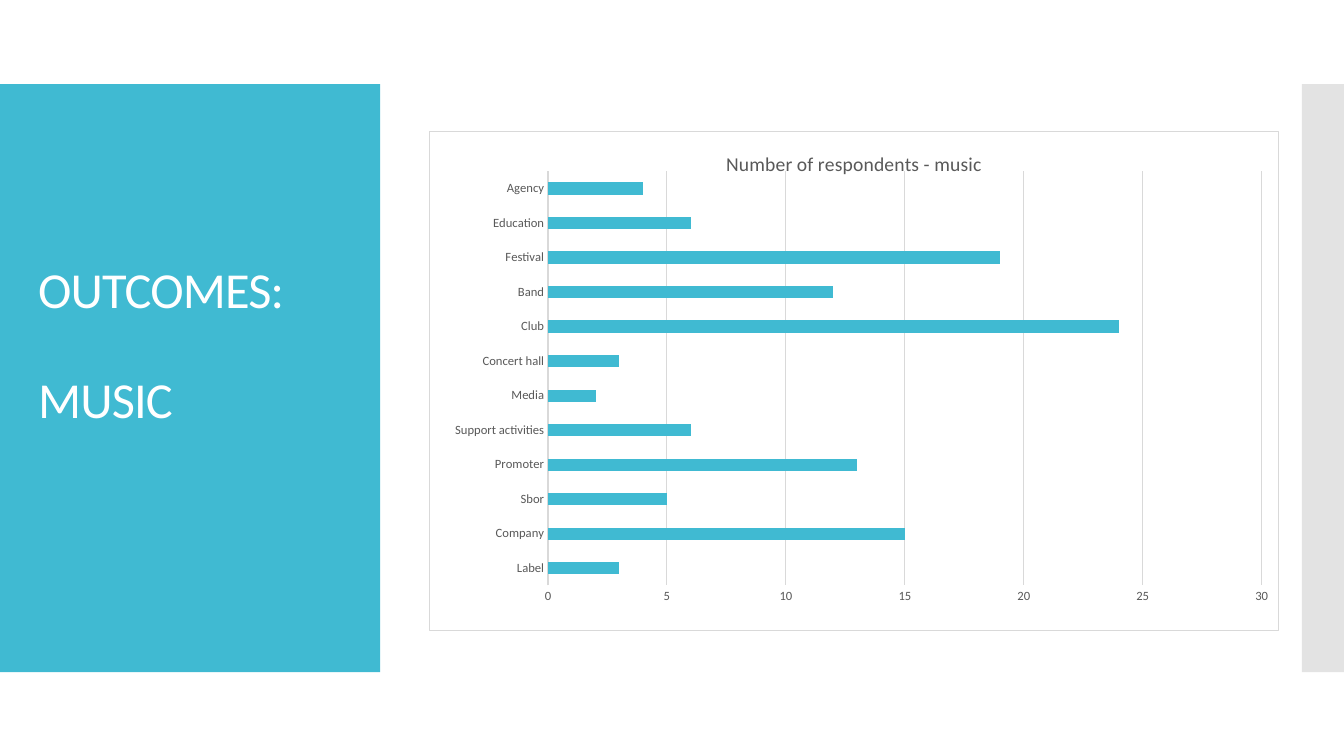
import pptx
import pptx.chart.data
import pptx.dml.color
import pptx.enum.chart
import pptx.enum.shapes
import pptx.enum.text
import pptx.oxml
import pptx.oxml.ns
import pptx.util

Cm = pptx.util.Cm
Pt = pptx.util.Pt
RGBColor = pptx.dml.color.RGBColor

TEAL = RGBColor(0x40, 0xBA, 0xD2)
SILVER = RGBColor(0xC8, 0xC8, 0xC8)
WHITE = RGBColor(0xFF, 0xFF, 0xFF)
GRID_GREY = RGBColor(0xD9, 0xD9, 0xD9)
TEXT_GREY = RGBColor(0x59, 0x59, 0x59)
FONT = "Calibri"

BAND_TOP, BAND_HEIGHT = Cm(2.12), Cm(14.82)

RESPONDENTS = {
    "Label": 3, "Company": 15, "Sbor": 5, "Promoter": 13,
    "Support activities": 6, "Media": 2, "Concert hall": 3, "Club": 24,
    "Band": 12, "Festival": 19, "Education": 6, "Agency": 4,
}


def style_font(font, size, color):
    font.name = FONT
    font.size = Pt(size)
    font.bold = False
    font.color.rgb = color


def add_band(page, left, width, color, opacity=100):
    band = page.shapes.add_shape(
        pptx.enum.shapes.MSO_SHAPE.RECTANGLE, left, BAND_TOP, width, BAND_HEIGHT)
    band.shadow.inherit = False
    band.line.fill.background()
    band.fill.solid()
    band.fill.fore_color.rgb = color
    if opacity < 100:
        color_element = band.fill._xPr.find(".//" + pptx.oxml.ns.qn("a:srgbClr"))
        color_element.append(pptx.oxml.parse_xml(
            f'<a:alpha {pptx.oxml.ns.nsdecls("a")} val="{opacity * 1000}"/>'))


def add_heading(page, lines):
    box = page.shapes.add_textbox(Cm(0.71), Cm(3.12), Cm(8.18), Cm(11.25))
    frame = box.text_frame
    frame.word_wrap = True
    frame.vertical_anchor = pptx.enum.text.MSO_ANCHOR.MIDDLE
    frame.text = "\n".join(lines)
    for index, para in enumerate(frame.paragraphs):
        para.line_spacing = 0.9
        para.space_before = Pt(39.5 if index else 0)
        for span in para.runs:
            style_font(span.font, 36, WHITE)
            span.font._element.set("spc", "-60")


def frame_chart(chart):
    """Give the chart area a white fill and a thin grey border."""
    chart._chartSpace.find(pptx.oxml.ns.qn("c:chart")).addnext(pptx.oxml.parse_xml(
        f'<c:spPr {pptx.oxml.ns.nsdecls("c", "a")}>'
        f'<a:solidFill><a:srgbClr val="{WHITE}"/></a:solidFill>'
        f'<a:ln w="{Pt(0.75)}"><a:solidFill><a:srgbClr val="{GRID_GREY}"/>'
        '</a:solidFill></a:ln></c:spPr>'))


def place_plot(chart, x, y, w, h):
    """Fix the inner plot area, in fractions of the chart."""
    plot_area = chart._chartSpace.chart.plotArea
    for layout in plot_area.findall(pptx.oxml.ns.qn("c:layout")):
        plot_area.remove(layout)
    sizes = "".join(f'<c:{tag} val="{value}"/>'
                    for tag, value in zip("xywh", (x, y, w, h)))
    plot_area.insert(0, pptx.oxml.parse_xml(
        f'<c:layout {pptx.oxml.ns.nsdecls("c")}><c:manualLayout>'
        '<c:layoutTarget val="inner"/><c:xMode val="edge"/><c:yMode val="edge"/>'
        f'{sizes}</c:manualLayout></c:layout>'))


def style_line(line):
    line.color.rgb = GRID_GREY
    line.width = Pt(0.75)


def style_axes(chart):
    categories, values = chart.category_axis, chart.value_axis
    for axis in (categories, values):
        axis.major_tick_mark = pptx.enum.chart.XL_TICK_MARK.NONE
        axis.minor_tick_mark = pptx.enum.chart.XL_TICK_MARK.NONE
        style_font(axis.tick_labels.font, 9, TEXT_GREY)
    style_line(categories.format.line)
    values.minimum_scale, values.maximum_scale, values.major_unit = 0, 30, 5
    values.format.line.fill.background()
    values.has_major_gridlines = True
    style_line(values.major_gridlines.format.line)


def add_bar_chart(page, title, counts):
    data = pptx.chart.data.CategoryChartData()
    data.categories = list(counts)
    data.add_series("Series 1", list(counts.values()))
    chart = page.shapes.add_chart(
        pptx.enum.chart.XL_CHART_TYPE.BAR_CLUSTERED,
        Cm(10.8), Cm(3.3), Cm(21.44), Cm(12.6), data).chart
    chart.font.name = FONT
    chart.font.size = Pt(10)
    chart.has_legend = False
    chart.has_title = True
    chart.chart_title.text_frame.text = title
    style_font(chart.chart_title.text_frame.paragraphs[0].runs[0].font, 14, TEXT_GREY)

    plot = chart.plots[0]
    plot.gap_width = 182
    plot.vary_by_categories = False
    fill = plot.series[0].format.fill
    fill.solid()
    fill.fore_color.rgb = TEAL

    style_axes(chart)
    frame_chart(chart)
    place_plot(chart, 0.14, 0.08, 0.84, 0.83)


def main():
    deck = pptx.Presentation()
    deck.slide_width, deck.slide_height = Cm(33.87), Cm(19.05)
    page = deck.slides.add_slide(deck.slide_layouts[6])
    add_band(page, Cm(0), Cm(9.58), TEAL)
    add_band(page, Cm(32.81), Cm(1.06), SILVER, opacity=50)
    add_heading(page, ["OUTCOMES:", "MUSIC"])
    add_bar_chart(page, "Number of respondents - music", RESPONDENTS)
    deck.save("out.pptx")


if __name__ == "__main__":
    main()
